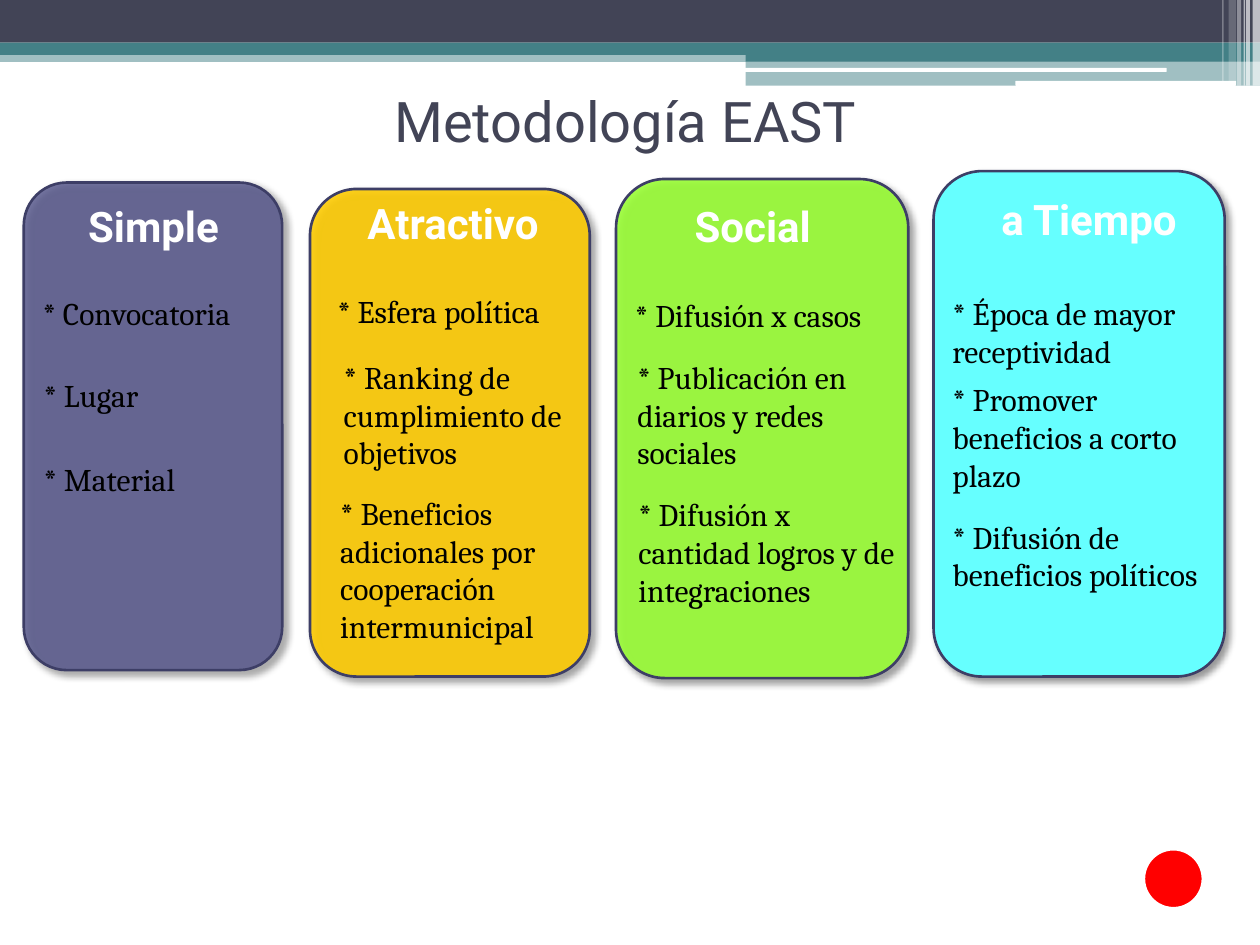
from lxml.etree import SubElement
from pptx import Presentation
from pptx.dml.color import RGBColor
from pptx.enum.shapes import MSO_SHAPE
from pptx.enum.text import MSO_ANCHOR, PP_ALIGN
from pptx.oxml.ns import qn
from pptx.util import Cm, Pt

SLATE = RGBColor(0x42, 0x44, 0x56)
TEAL = RGBColor(0x43, 0x80, 0x86)
WHITE = RGBColor(0xFF, 0xFF, 0xFF)
BLACK = RGBColor(0x00, 0x00, 0x00)
RED = RGBColor(0xFF, 0x00, 0x00)
OUTLINE = RGBColor(0x3D, 0x3E, 0x66)
PURPLE = RGBColor(0x53, 0x54, 0x8A)
AMBER = RGBColor(0xFF, 0xCC, 0x00)
LIME = RGBColor(0x99, 0xFF, 0x33)
CYAN = RGBColor(0x66, 0xFF, 0xFF)

# Box in cm, fill, opacity %, heading (text, dx, dy, width),
# items (text, lines, dx, dy, width); offsets start at the card's corner
CARDS = [
    ((0.48, 3.68, 5.21, 9.83), PURPLE, 80, ("Simple", 0.81, 0.23, 3.61), [
        ("* Convocatoria", 1, 0.13, 2.13, 5.16),
        ("* Lugar", 1, 0.15, 3.78, 5.16),
        ("* Material", 1, 0.15, 5.46, 5.16)]),
    ((6.25, 3.81, 5.64, 9.83), AMBER, 88, ("Atractivo", 0.74, 0.05, 4.29), [
        ("* Esfera política", 1, 0.3, 1.96, 5.16),
        ("* Ranking de cumplimiento de objetivos", 3, 0.43, 3.28, 5.08),
        ("* Beneficios adicionales por cooperación intermunicipal",
         4, 0.36, 6.02, 5.13)]),
    ((12.42, 3.61, 5.89, 10.06), LIME, 88, ("Social", 0.61, 0.3, 4.29), [
        ("* Difusión x casos", 1, 0.13, 2.24, 5.77),
        ("* Publicación en diarios y redes sociales", 3, 0.18, 3.48, 5.49),
        ("* Difusión x cantidad logros y de integraciones",
         3, 0.2, 6.25, 5.77)]),
    ((18.82, 3.45, 5.87, 10.19), CYAN, 100, ("a Tiempo", 0.99, 0.33, 4.29), [
        ("* Época de mayor receptividad", 2, 0.13, 2.36, 5.54),
        ("* Promover beneficios a corto plazo", 3, 0.13, 4.09, 5.69),
        ("* Difusión de beneficios políticos", 3, 0.13, 6.86, 5.69)]),
]


def add_box(slide, kind, box, fill, opacity=100, line=None):
    sp = slide.shapes.add_shape(kind, *[Cm(v) for v in box])
    sp.shadow.inherit = False
    sp.fill.solid()
    sp.fill.fore_color.rgb = fill
    if opacity < 100:
        color = sp.fill._xPr.find(qn("a:solidFill"))[0]
        SubElement(color, qn("a:alpha"), val=str(opacity * 1000))
    if line is None:
        sp.line.fill.background()
    else:
        sp.line.color.rgb = line
        sp.line.width = Pt(1.5)
    return sp


def add_text(slide, text, box, size=18, font="Cambria", color=BLACK,
             bold=False, align=PP_ALIGN.LEFT, anchor=MSO_ANCHOR.TOP):
    tf = slide.shapes.add_textbox(*[Cm(v) for v in box]).text_frame
    tf.word_wrap = True
    tf.vertical_anchor = anchor
    p = tf.paragraphs[0]
    p.alignment = align
    r = p.add_run()
    r.text = text
    r.font.size = Pt(size)
    r.font.name = font
    r.font.bold = bold
    r.font.color.rgb = color


def add_drop_shadow(sp):
    effects = sp._element.spPr.find(qn("a:effectLst"))
    shadow = SubElement(effects, qn("a:outerShdw"), blurRad=str(Pt(4)),
                        dist=str(Pt(3)), dir="2700000", algn="tl",
                        rotWithShape="0")
    color = SubElement(shadow, qn("a:srgbClr"), val=str(BLACK))
    SubElement(color, qn("a:alpha"), val="40000")


def add_banner(slide, left, top, width):
    right = left + width
    middle = left + 15.03
    half = width - 15.03
    # Horizontal bands
    for x, y, w, h, fill, opacity in [
            (left, 1.02, width, 0.23, TEAL, 50),
            (left, 0, width, 0.86, SLATE, 100),
            (left, 0.86, width, 0.25, TEAL, 100),
            (middle, 0.99, half, 0.25, TEAL, 100),
            (middle, 1.23, half, 0.5, TEAL, 50)]:
        add_box(slide, MSO_SHAPE.RECTANGLE, (x, top + y, w, h), fill, opacity)
    # White rounded strips
    for x, y, w, h in [(15.01, 1.37, 8.51, 0.08), (20.47, 1.63, 4.45, 0.1)]:
        add_box(slide, MSO_SHAPE.ROUNDED_RECTANGLE,
                (left + x, top + y, w, h), WHITE)
    # Translucent stripes, measured from the right edge
    for inset, w, h, opacity in [
            (0.15, 0.15, 1.73, 65), (0.28, 0.08, 1.73, 65),
            (0.33, 0.03, 1.73, 60), (0.46, 0.08, 1.73, 40),
            (0.63, 0.15, 1.63, 20), (0.76, 0.03, 1.63, 30)]:
        add_box(slide, MSO_SHAPE.RECTANGLE, (right - inset, top, w, h),
                WHITE, opacity)


def add_card(slide, box, fill, opacity, heading, items):
    left, top = box[:2]
    add_drop_shadow(add_box(slide, MSO_SHAPE.ROUNDED_RECTANGLE, box, fill,
                            opacity, OUTLINE))
    title, dx, dy, width = heading
    add_text(slide, title, (left + dx, top + dy, width, 1.27), size=24,
             font="Roboto", color=WHITE, bold=True, align=PP_ALIGN.CENTER)
    for text, lines, dx, dy, width in items:
        add_text(slide, text,
                 (left + dx, top + dy, width, 0.25 + 0.77 * lines))


def main():
    prs = Presentation()
    prs.slide_width, prs.slide_height = Cm(25.4), Cm(19.05)
    slide = prs.slides.add_slide(prs.slide_layouts[6])
    add_banner(slide, 0, 0, 25.4)
    add_text(slide, "Metodología EAST", (0.51, 1.52, 24.21, 1.8), size=32,
             font="Roboto", color=SLATE, align=PP_ALIGN.CENTER,
             anchor=MSO_ANCHOR.MIDDLE)
    for card in CARDS:
        add_card(slide, *card)
    # Red marker in the corner
    add_box(slide, MSO_SHAPE.OVAL, (23.06, 17.12, 1.19, 1.19), RED, line=WHITE)
    prs.save("out.pptx")


if __name__ == "__main__":
    main()
